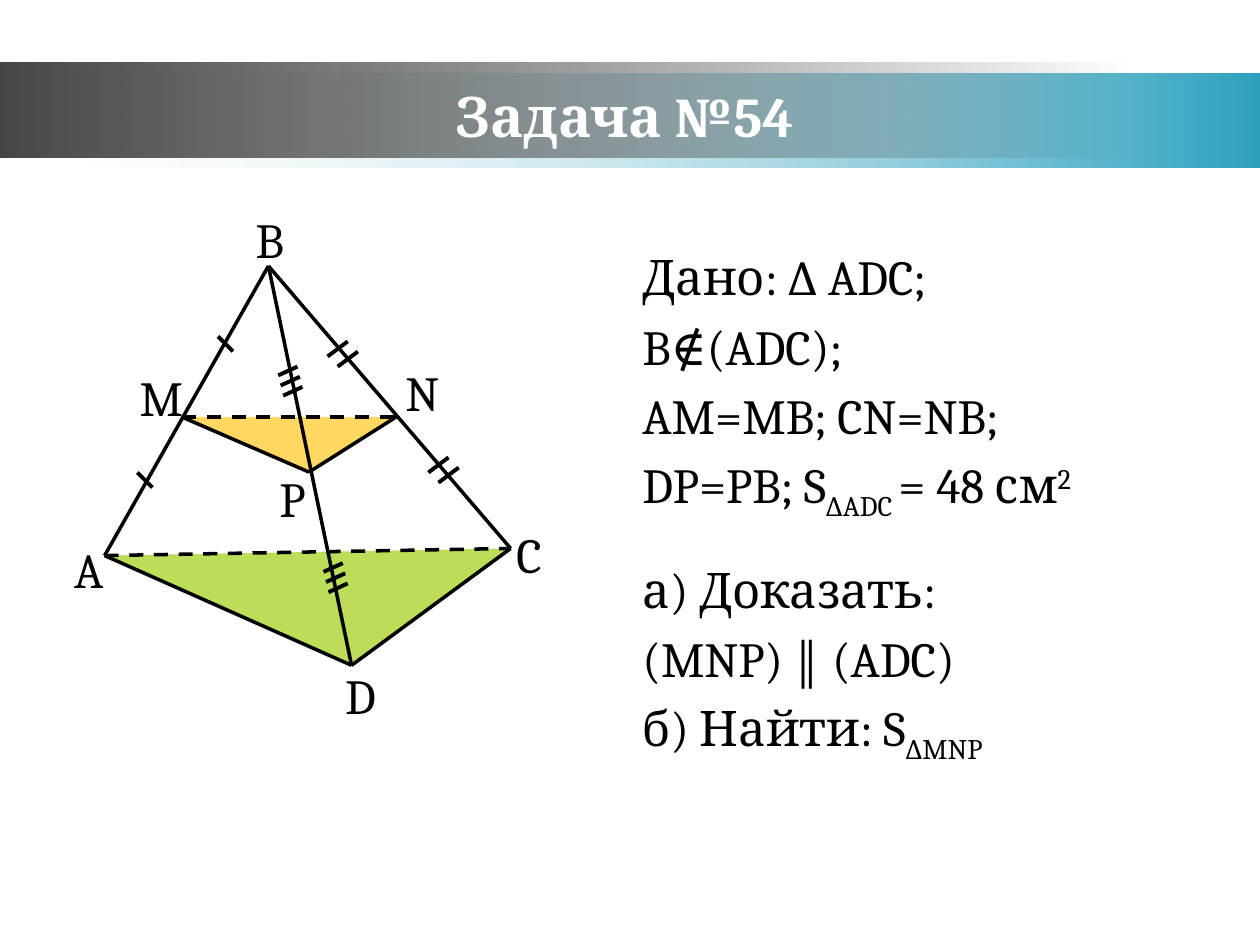
import pptx
import pptx.dml.color
import pptx.enum.dml
import pptx.enum.shapes
import pptx.enum.text
import pptx.oxml.ns
import pptx.util
from lxml import etree

Pt = pptx.util.Pt
qn = pptx.oxml.ns.qn
SOLID = pptx.enum.dml.MSO_LINE.SOLID
DASH = pptx.enum.dml.MSO_LINE.DASH


def tint(code):
    return pptx.dml.color.RGBColor.from_string(code)


class Board:
    """Holds the text style and the current slide, and draws on it in points."""

    font = "Cambria"
    size = 28
    ink = "000000"

    def __init__(self, deck):
        self.slide = deck.slides.add_slide(deck.slide_layouts[6])
        self.shapes = self.slide.shapes

    def fade(self, node, alphas):
        for color, alpha in zip(node.xpath("./p:spPr//a:srgbClr"), alphas):
            if alpha < 100:
                etree.SubElement(color, qn("a:alpha"), val=str(alpha * 1000))

    def band(self, top, width, colors, alphas):
        kind = pptx.enum.shapes.MSO_SHAPE.RECTANGLE
        shape = self.shapes.add_shape(kind, 0, Pt(top), Pt(width), Pt(54))
        shape.shadow.inherit = False
        shape.line.fill.background()
        shape.fill.gradient()
        shape.fill.gradient_angle = 0
        for stop, color in zip(shape.fill.gradient_stops, colors):
            stop.color.rgb = tint(color)
        self.fade(shape.element, alphas)

    def face(self, corners, color, alpha):
        first, *rest = [(Pt(x), Pt(y)) for x, y in corners]
        path = self.shapes.build_freeform(*first)
        path.add_line_segments(rest, close=True)
        shape = path.convert_to_shape()
        shape.shadow.inherit = False
        shape.line.fill.background()
        shape.fill.solid()
        shape.fill.fore_color.rgb = tint(color)
        self.fade(shape.element, [alpha])

    def edge(self, start, end, width=2, dash=SOLID):
        kind = pptx.enum.shapes.MSO_CONNECTOR.STRAIGHT
        line = self.shapes.add_connector(kind, *map(Pt, (*start, *end)))
        line.line.color.rgb = tint(self.ink)
        line.line.width = Pt(width)
        line.line.dash_style = dash
        etree.SubElement(line.element.spPr, qn("a:effectLst"))

    def ticks(self, start, slant, count, step):
        for i in range(count):
            x, y = start[0] + i * step[0], start[1] + i * step[1]
            self.edge((x, y), (x + slant[0], y + slant[1]), 2.25)

    def text(self, box, lines, size=None, color=None, bold=False, title=False):
        frame = self.shapes.add_textbox(*map(Pt, box)).text_frame
        frame.word_wrap = True
        if title:
            frame.vertical_anchor = pptx.enum.text.MSO_ANCHOR.MIDDLE
        for i, line in enumerate(lines):
            para = frame.add_paragraph() if i else frame.paragraphs[0]
            para.space_before = Pt(6 if i else 0)
            if title:
                para.alignment = pptx.enum.text.PP_ALIGN.CENTER
            for words, shift in line:
                run = para.add_run()
                run.text = words
                run.font.name = self.font
                run.font.size = Pt(size or self.size)
                run.font.bold = bold
                run.font.color.rgb = tint(color or self.ink)
                if shift:
                    run.font._element.set("baseline", str(shift * 1000))


def main():
    deck = pptx.Presentation()
    deck.slide_width, deck.slide_height = Pt(720), Pt(540)
    board = Board(deck)

    board.band(42, 720, ("F1F6F8", "2DA2BF"), (0, 100))
    board.band(36, 648, ("464646", "323232"), (100, 0))
    board.text((66, 43.2, 582, 44.6), [[("Задача №54", 0)]],
               size=32, color="FFFFFF", bold=True, title=True)

    board.text((360, 137.5, 330.5, 161.3), [
        [("Дано: ∆ ADC;", 0)],
        [("B∉(ADC);", 0)],
        [("AM=MB; CN=NB;", 0)],
        [("DP=PB; S", 0), ("∆ADC ", -25), ("= 48 см", 0), ("2", 30)],
    ])
    board.text((360, 316, 221, 121), [
        [("а) Доказать:", 0)],
        [("(MNP) ‖ (ADC)", 0)],
        [("б) Найти: S", 0), ("∆MNP", -25)],
    ])

    dots = {"A": (59.8, 317.5), "B": (153.4, 152), "C": (291.8, 313.4),
            "D": (200.9, 380.2), "M": (104.2, 238.4), "N": (226.2, 238.4),
            "P": (176.6, 269.8)}
    board.face([dots[n] for n in "ACD"], "99CC00", 66)
    board.face([dots[n] for n in "MNP"], "FFC000", 62)
    for a, b in ("MP", "PN", "AD", "DC", "BA", "BC", "BD"):
        board.edge(dots[a], dots[b])
    for a, b in ("MN", "AC"):
        board.edge(dots[a], dots[b], dash=DASH)

    labels = {"A": (35.3, 304.6, 51), "D": (190.1, 376.6, 28),
              "C": (288, 295.9, 34), "B": (139, 115.9, 28),
              "M": (72.7, 206.6, 40), "N": (224.6, 203.8, 40),
              "P": (152.6, 264.2, 28)}
    for name, (x, y, wide) in labels.items():
        board.text((x, y, wide, 41), [[(name, 0)]])

    marks = [
        ((8.6, 8.6), 1, (0, 0), [(124.6, 192.2), (78.5, 270)]),
        ((-11.5, 8.6), 2, (5.8, 5.8), [(198.7, 195.1), (256.3, 261.4)]),
        ((-11, 5), 3, (1.4, 5.8), [(170, 209.5), (195.9, 321.8)]),
    ]
    for slant, count, step, starts in marks:
        for start in starts:
            board.ticks(start, slant, count, step)

    deck.save("out.pptx")


if __name__ == "__main__":
    main()
